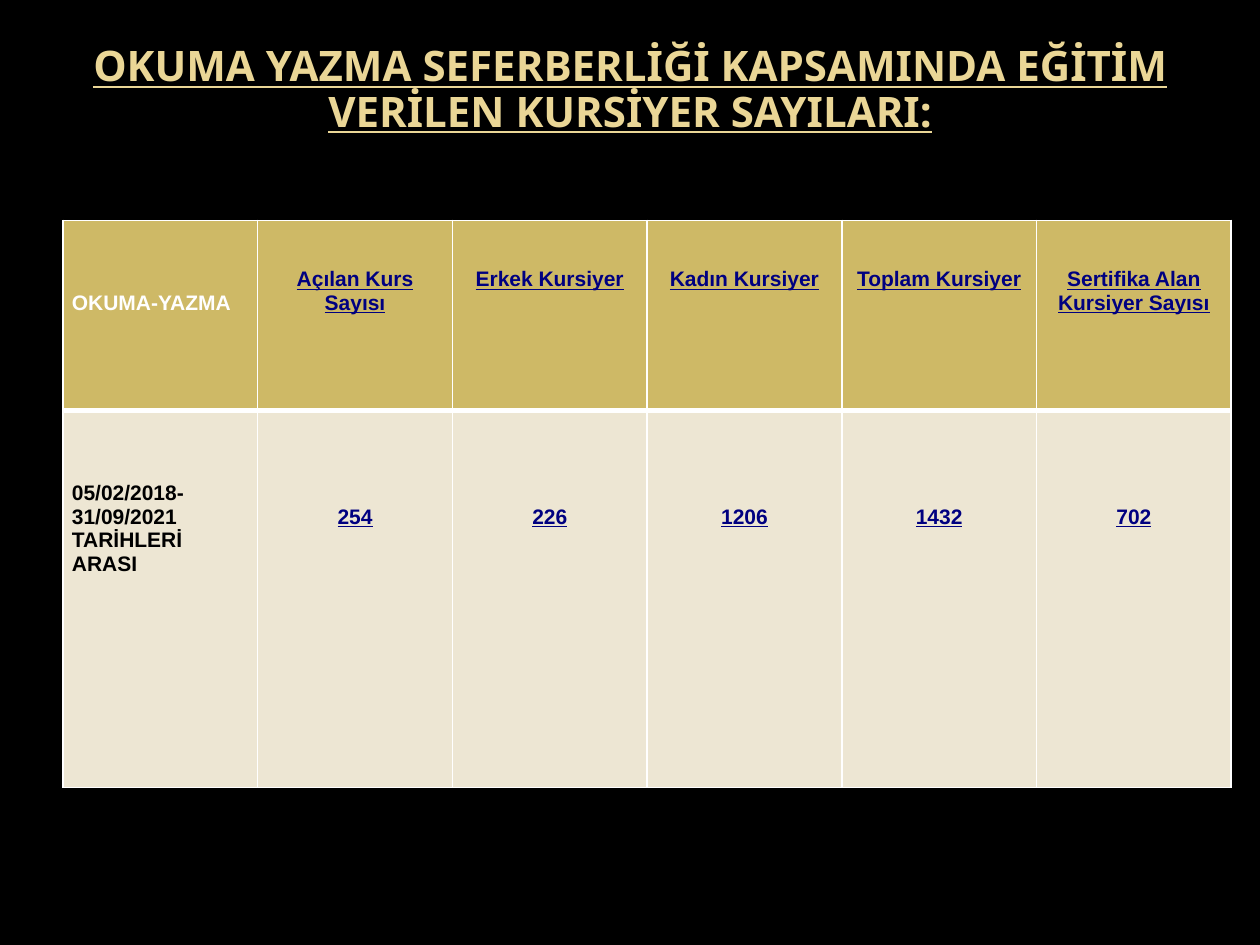
from dataclasses import dataclass

import lxml.etree
import pptx
import pptx.dml.color
import pptx.enum.text
import pptx.oxml.ns
import pptx.table
import pptx.util

Cm, Pt = pptx.util.Cm, pptx.util.Pt
RGB = pptx.dml.color.RGBColor.from_string
ALIGN = pptx.enum.text.PP_ALIGN

COLORS = {
    "background": "000000",
    "title": "EAD696",
    "header": "CEB966",
    "body": "EDE6D3",
    "border": "FFFFFF",
    "value": "000080",
    "header_label": "FFFFFF",
    "body_label": "000000",
}
LINE_HEIGHT = 0.48  # cm, one 12 pt line
LABEL_DROP = 3  # lines above a row label


@dataclass
class Row:
    label: str
    values: list[str]
    height: float  # cm
    fill: str
    label_color: str
    value_drop: int  # lines above the values
    top: float  # border widths in points
    bottom: float


ROWS = [
    Row("OKUMA-YAZMA",
        ["Açılan Kurs Sayısı", "Erkek Kursiyer", "Kadın Kursiyer",
         "Toplam Kursiyer", "Sertifika Alan Kursiyer Sayısı"],
        3.83, "header", "header_label", 2, 1, 3),
    Row("05/02/2018-31/09/2021 TARİHLERİ ARASI",
        ["254", "226", "1206", "1432", "702"],
        7.6, "body", "body_label", 4, 3, 1),
]


def set_borders(cell: pptx.table._Cell, top: float, bottom: float) -> None:
    tc_pr = cell._tc.get_or_add_tcPr()
    qn = pptx.oxml.ns.qn
    for side, width in {"L": 1, "R": 1, "T": top, "B": bottom}.items():
        ln = lxml.etree.SubElement(tc_pr, qn(f"a:ln{side}"), w=str(Pt(width)))
        fill = lxml.etree.SubElement(ln, qn("a:solidFill"))
        lxml.etree.SubElement(fill, qn("a:srgbClr"), val=COLORS["border"])


def fill_cell(cell: pptx.table._Cell, text: str, row: Row, is_label: bool) -> None:
    set_borders(cell, row.top, row.bottom)
    cell.fill.solid()
    cell.fill.fore_color.rgb = RGB(COLORS[row.fill])
    cell.margin_left = cell.margin_right = Cm(0.18)
    cell.margin_top = Cm(LINE_HEIGHT * (LABEL_DROP if is_label else row.value_drop))
    cell.margin_bottom = 0
    p = cell.text_frame.paragraphs[0]
    p.text = text
    p.alignment = ALIGN.LEFT if is_label else ALIGN.CENTER
    p.font.name, p.font.size, p.font.bold = "Arial", Pt(12), True
    p.font.underline = not is_label
    p.font.color.rgb = RGB(COLORS[row.label_color if is_label else "value"])


prs = pptx.Presentation()
prs.slide_width, prs.slide_height = Cm(25.4), Cm(19.05)
s = prs.slides.add_slide(prs.slide_layouts[6])
s.background.fill.solid()
s.background.fill.fore_color.rgb = RGB(COLORS["background"])

# Title, raised by a deeper bottom margin
sp = s.shapes.add_textbox(Cm(1.27), Cm(0.76), Cm(22.86), Cm(3.18))
tf = sp.text_frame
tf.word_wrap = True
tf.vertical_anchor = pptx.enum.text.MSO_ANCHOR.MIDDLE
tf.margin_bottom = Cm(1.16)
p = tf.paragraphs[0]
p.text = "OKUMA YAZMA SEFERBERLİĞİ KAPSAMINDA EĞİTİM VERİLEN KURSİYER SAYILARI:"
p.alignment = ALIGN.CENTER
p.line_spacing = 0.9
p.font.name, p.font.size = "Noto Sans", Pt(24)
p.font.bold = p.font.underline = True
p.font.color.rgb = RGB(COLORS["title"])

# Table of trainee counts
n_cols = 1 + len(ROWS[0].values)
height = sum(row.height for row in ROWS)
table = s.shapes.add_table(len(ROWS), n_cols, Cm(1.27), Cm(4.44),
                           Cm(23.55), Cm(height)).table
for r, row in enumerate(ROWS):
    table.rows[r].height = Cm(row.height)
    for c, text in enumerate([row.label, *row.values]):
        fill_cell(table.cell(r, c), text, row, c == 0)

prs.save("out.pptx")
